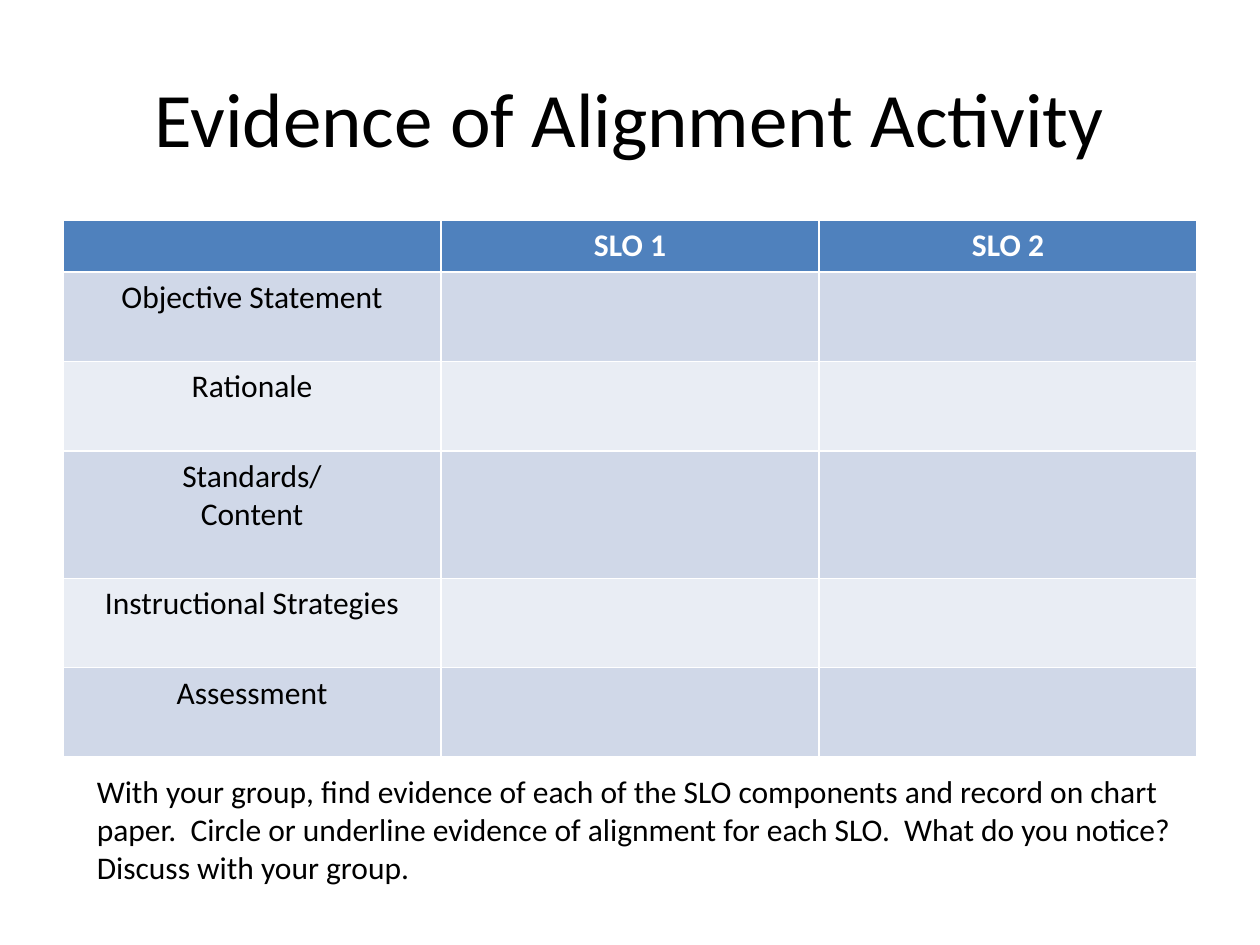
from pptx import Presentation
from pptx.dml.color import RGBColor
from pptx.enum.text import MSO_ANCHOR, PP_ALIGN
from pptx.util import Inches, Pt

FONT = "Calibri"
BLACK = RGBColor(0x00, 0x00, 0x00)
WHITE = RGBColor(0xFF, 0xFF, 0xFF)
HEADER_BLUE = RGBColor(0x4F, 0x81, 0xBD)
BANDS = (RGBColor(0xD0, 0xD8, 0xE8), RGBColor(0xE9, 0xED, 0xF4))

HEADERS = ("", "SLO 1", "SLO 2")
COMPONENTS = (
    ("Objective Statement", 0.71),
    ("Rationale", 0.71),
    ("Standards/\nContent", 1.01),
    ("Instructional Strategies", 0.71),
    ("Assessment", 0.71),
)
HEADER_HEIGHT = 0.41


def write(tf, text, size, color=BLACK, bold=False, align=PP_ALIGN.LEFT):
    tf.text = text
    for p in tf.paragraphs:
        p.alignment = align
        for r in p.runs:
            r.font.name = FONT
            r.font.size = Pt(size)
            r.font.bold = bold
            r.font.color.rgb = color


def add_text(slide, box, text, size, align=PP_ALIGN.LEFT, anchor=MSO_ANCHOR.TOP):
    tf = slide.shapes.add_textbox(*map(Inches, box)).text_frame
    tf.word_wrap = True
    tf.vertical_anchor = anchor
    write(tf, text, size, align=align)


def add_alignment_table(slide, left, top, width):
    """The default table style supplies the white cell borders."""
    heights = [HEADER_HEIGHT] + [height for _, height in COMPONENTS]
    table = slide.shapes.add_table(
        len(heights), len(HEADERS),
        Inches(left), Inches(top), Inches(width), Inches(sum(heights)),
    ).table
    for column in table.columns:
        column.width = Inches(width / len(HEADERS))
    for row, height in zip(table.rows, heights):
        row.height = Inches(height)

    rows = [HEADERS] + [(name, "", "") for name, _ in COMPONENTS]
    for i, texts in enumerate(rows):
        header = i == 0
        for cell, text in zip(table.rows[i].cells, texts):
            cell.fill.solid()
            cell.fill.fore_color.rgb = HEADER_BLUE if header else BANDS[(i - 1) % 2]
            write(cell.text_frame, text, 18, WHITE if header else BLACK,
                  header, PP_ALIGN.CENTER)


def main():
    prs = Presentation()
    prs.slide_width, prs.slide_height = Inches(10), Inches(7.5)
    slide = prs.slides.add_slide(prs.slide_layouts[6])
    add_text(slide, (0.5, 0.3, 9, 1.25), "Evidence of Alignment Activity", 44,
             PP_ALIGN.CENTER, MSO_ANCHOR.MIDDLE)
    add_alignment_table(slide, 0.5, 1.75, 9)
    add_text(slide, (0.67, 6.08, 8.83, 1.01),
             "With your group, find evidence of each of the SLO components and "
             "record on chart paper.  Circle or underline evidence of alignment "
             "for each SLO.  What do you notice?  Discuss with your group.", 18)
    prs.save("out.pptx")


if __name__ == "__main__":
    main()
